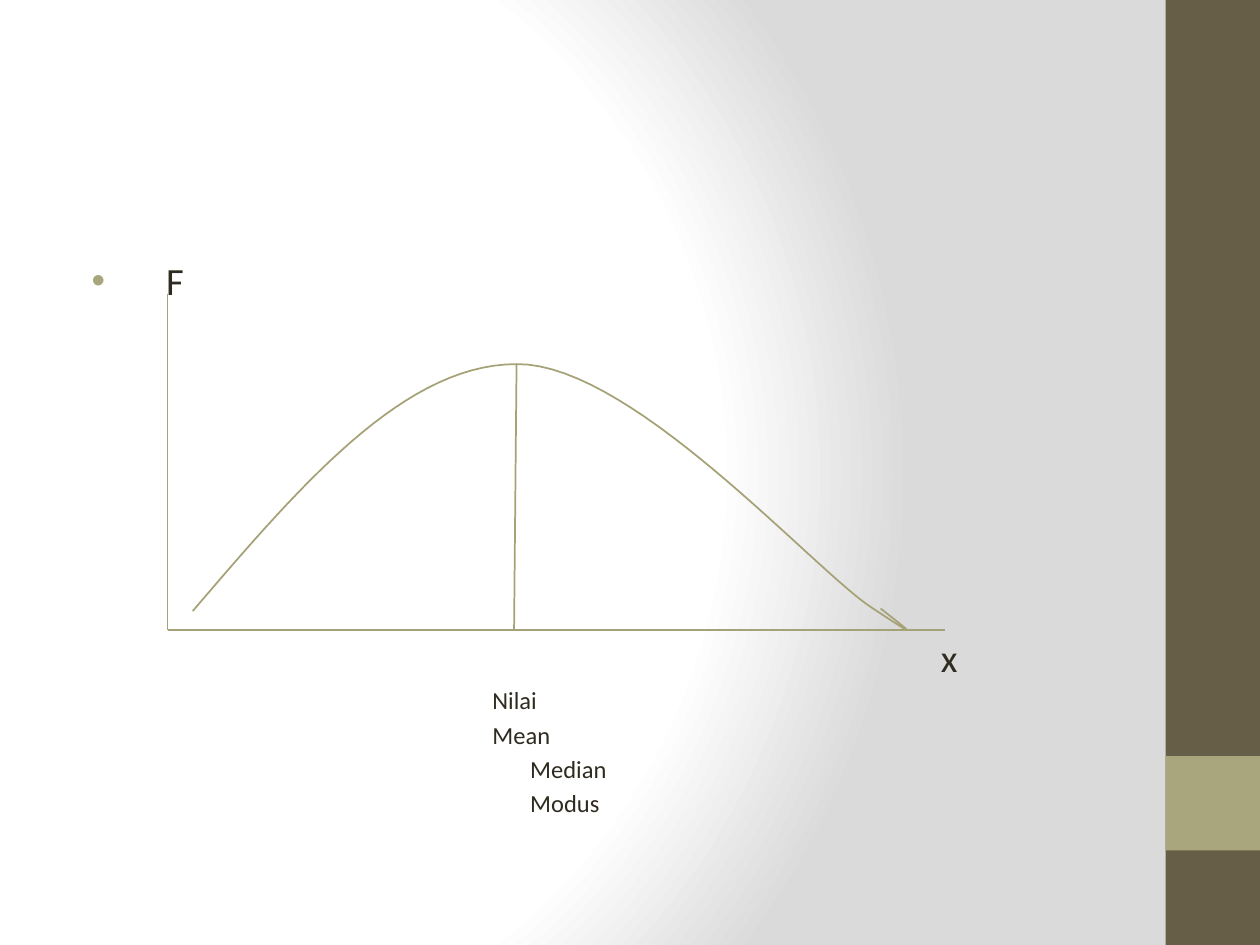
from lxml.etree import SubElement
from pptx import Presentation
from pptx.dml.color import RGBColor
from pptx.enum.shapes import MSO_CONNECTOR, MSO_SHAPE
from pptx.oxml import parse_xml
from pptx.oxml.ns import nsdecls, qn
from pptx.util import Inches, Pt

DARK, SAGE, LINE, INK = "675E47", "A9A57C", "A6A278", "2F2B20"


def tint(code):
    return RGBColor.from_string(code)


class Deck:
    """Hold the style and current slide, and draw each kind of element."""

    def __init__(self, show, font="Calibri"):
        self.slide = show.slides.add_slide(show.slide_layouts[6])
        self.shapes = self.slide.shapes
        self.font = font

    def glow(self, stops, rect):
        marks = "".join(
            f'<a:gs pos="{pos * 1000}"><a:srgbClr val="{code}"/></a:gs>'
            for pos, code in stops)
        sides = " ".join(f'{side}="{part * 1000}"' for side, part in zip("ltrb", rect))
        back = parse_xml(
            f'<p:bg {nsdecls("p", "a")}><p:bgPr><a:gradFill rotWithShape="1">'
            f'<a:gsLst>{marks}</a:gsLst><a:path path="circle">'
            f'<a:fillToRect {sides}/></a:path></a:gradFill>'
            '<a:effectLst/></p:bgPr></p:bg>')
        self.slide.element.cSld.insert(0, back)

    def block(self, left, top, width, height, code):
        shape = self.shapes.add_shape(
            MSO_SHAPE.RECTANGLE, *map(Inches, (left, top, width, height)))
        shape.shadow.inherit = False
        shape.fill.solid()
        shape.fill.fore_color.rgb = tint(code)
        shape.line.fill.background()

    def stroke(self, shape):
        shape.line.color.rgb = tint(LINE)
        shape.line.width = Pt(1)

    def rule(self, start, end):
        line = self.shapes.add_connector(
            MSO_CONNECTOR.STRAIGHT, *map(Inches, start + end))
        self.stroke(line)
        SubElement(line.element.spPr, qn("a:effectLst"))

    def curve(self, start, arcs, steps=30):
        points, first = [], start
        for arc in arcs:
            ends = (first, *arc)
            for step in range(1, steps + 1):
                t = step / steps
                rates = ((1 - t) ** 3, 3 * t * (1 - t) ** 2, 3 * t * t * (1 - t), t ** 3)
                points.append(tuple(
                    Inches(sum(rate * end[axis] for rate, end in zip(rates, ends)))
                    for axis in (0, 1)))
            first = arc[-1]
        path = self.shapes.build_freeform(*map(Inches, start))
        path.add_line_segments(points, close=False)
        shape = path.convert_to_shape()
        shape.shadow.inherit = False
        shape.fill.background()
        self.stroke(shape)

    def text(self, left, top, width, height, lines, size, dot=False):
        box = self.shapes.add_textbox(*map(Inches, (left, top, width, height)))
        frame = box.text_frame
        frame.word_wrap = True
        for order, (words, inset) in enumerate(lines):
            para = frame.paragraphs[0] if order == 0 else frame.add_paragraph()
            para.space_after = Pt(2.8)
            props = para._p.get_or_add_pPr()
            props.set("marL", str(Inches(inset)))
            if dot:
                props.set("indent", str(Inches(0.13 - inset)))
                color = SubElement(props, qn("a:buClr"))
                SubElement(color, qn("a:srgbClr"), val=SAGE)
                SubElement(props, qn("a:buFont"), typeface="Arial")
                SubElement(props, qn("a:buChar"), char="•")
            run = para.add_run()
            run.text = words
            run.font.name = self.font
            run.font.size = Pt(size)
            run.font.color.rgb = tint(INK)


def main():
    show = Presentation()
    show.slide_width, show.slide_height = Inches(10), Inches(7.5)
    deck = Deck(show)
    deck.glow([(0, "FFFFFF"), (75, "FFFFFF"), (100, "DADADA")], (20, 50, 100, 50))
    deck.block(9.25, 0, 0.75, 7.5, DARK)
    deck.block(9.25, 6, 0.75, 0.75, SAGE)

    deck.text(0.5, 1.99, 1.5, 0.47, [("F", 0.72)], 22, dot=True)
    deck.text(7.37, 4.98, 0.5, 0.47, [("x", 0)], 22)
    deck.text(3.81, 5.39, 2, 1.2,
              [("Nilai", 0), ("Mean", 0), ("Median", 0.3), ("Modus", 0.3)], 14)

    base, peak = (1.33, 5), (4.1, 2.89)
    deck.rule((1.33, 2.33), base)
    deck.rule(base, (7.5, 5))
    deck.curve((1.53, 4.85), [
        ((2.37, 3.87), (3.2, 2.89), peak),
        ((5, 2.88), (6.42, 4.48), (6.9, 4.81)),
        ((7.38, 5.13), (7.18, 4.98), (6.99, 4.83)),
    ])
    deck.rule(peak, (4.08, 5))
    show.save("out.pptx")


if __name__ == "__main__":
    main()
